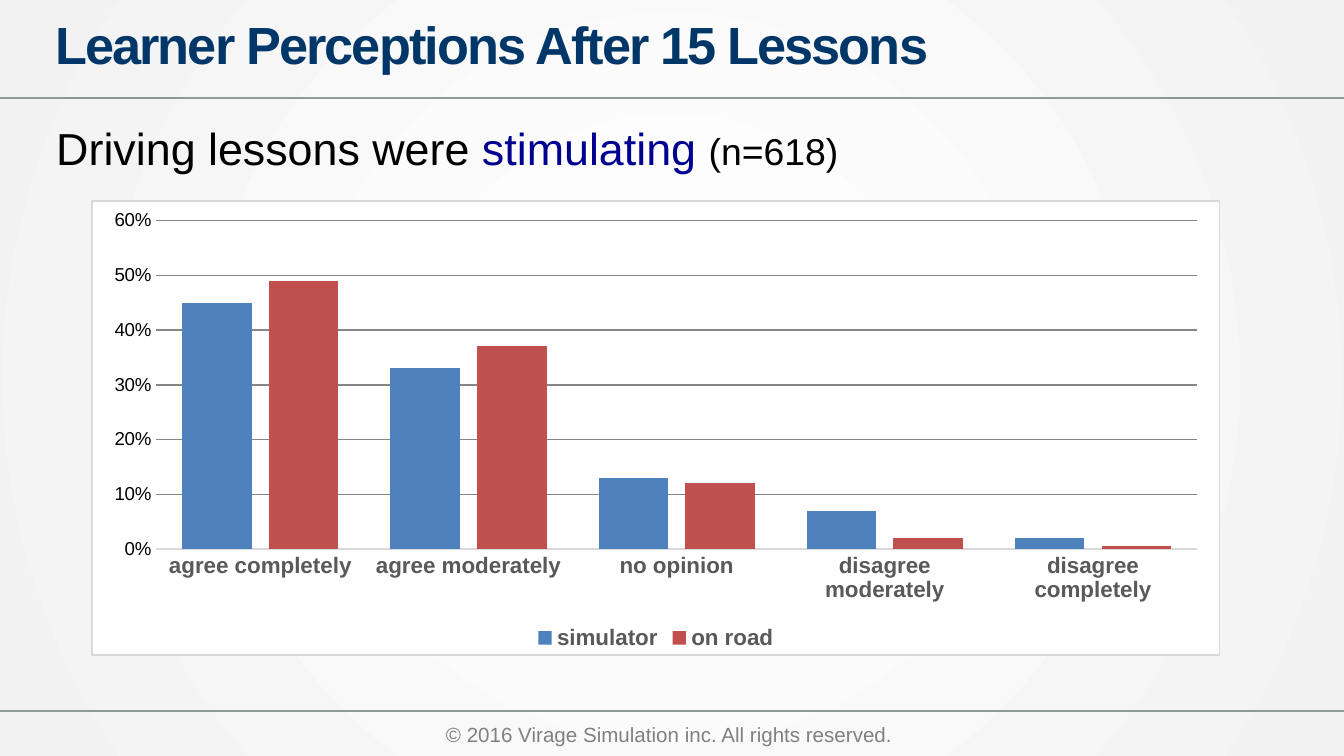
from lxml import etree
from pptx import Presentation, util as u
from pptx.chart.data import CategoryChartData
from pptx.dml.color import RGBColor
from pptx.enum import chart as ch, shapes, text
from pptx.oxml import parse_xml
from pptx.oxml.ns import nsdecls, qn

COLORS = {
    "title": "003768", "accent": "000090", "text": "000000", "footer": "808080",
    "rule": "8C9B93", "label": "595959", "border": "D9D9D9", "grid": "868686",
    "paper": "FFFFFF", "edge": "F2F2F2", "simulator": "4F81BD", "on road": "C0504D",
}


def color(name):
    return RGBColor.from_string(COLORS[name])


def style(font, size, name, bold=False):
    font.name = "Arial"
    font.size = u.Pt(size)
    font.bold = bold
    font.color.rgb = color(name)


deck = Presentation()
deck.slide_width = u.Inches(10)
deck.slide_height = u.Inches(10 * 9 / 16)
page = deck.slides.add_slide(deck.slide_layouts[5])

backdrop = page.background.fill
backdrop.gradient()
for stop, position, name in zip(backdrop.gradient_stops, (0.08, 1), ("paper", "edge")):
    stop.position = position
    stop.color.rgb = color(name)
gradient = page.background._cSld.find(".//" + qn("a:gradFill"))
gradient.replace(gradient.find(qn("a:lin")), parse_xml(
    f'<a:path {nsdecls("a")} path="circle">'
    '<a:fillToRect l="50000" t="50000" r="50000" b="50000"/></a:path>'))

for y in (0.73, 5.29):
    rule = page.shapes.add_connector(
        shapes.MSO_CONNECTOR.STRAIGHT, u.Inches(10), u.Inches(y), u.Inches(0), u.Inches(y))
    rule.line.color.rgb = color("rule")
    rule.line.width = u.Pt(0.75)
    etree.SubElement(rule._element.spPr, qn("a:effectLst"))

footer = page.shapes.add_textbox(u.Inches(3.22), u.Inches(5.32), u.Inches(3.56), u.Inches(0.29))
footer.text_frame.word_wrap = False
footer.text_frame.auto_size = text.MSO_AUTO_SIZE.SHAPE_TO_FIT_TEXT
para = footer.text_frame.paragraphs[0]
para.text = "© 2016 Virage Simulation inc. All rights reserved."
style(para.font, 11, "footer")

title = page.shapes.title
title.left, title.top = u.Inches(0.31), u.Inches(0.06)
title.width, title.height = u.Inches(7.47), u.Inches(0.53)
title.text_frame.text = "Learner Perceptions After 15 Lessons"
title.text_frame.auto_size = text.MSO_AUTO_SIZE.NONE
title.text_frame.vertical_anchor = text.MSO_ANCHOR.MIDDLE
para = title.text_frame.paragraphs[0]
para.alignment = text.PP_ALIGN.LEFT
style(para.font, 28, "title", True)
para.runs[0].font._element.set("spc", "-100")

statement = page.shapes.add_textbox(u.Inches(0.32), u.Inches(0.85), u.Inches(9.22), u.Inches(0.5))
statement.text_frame.word_wrap = True
statement.text_frame.auto_size = text.MSO_AUTO_SIZE.SHAPE_TO_FIT_TEXT
para = statement.text_frame.paragraphs[0]
for words, size, name in (
    ("Driving lessons were ", 24, "text"),
    ("stimulating ", 24, "accent"),
    ("(n=618)", 20, "text"),
):
    span = para.add_run()
    span.text = words
    style(span.font, size, name)

answers = CategoryChartData(number_format="0%")
answers.categories = ["agree completely", "agree moderately", "no opinion",
                      "disagree moderately", "disagree completely"]
answers.add_series("simulator", (0.45, 0.33, 0.13, 0.07, 0.02))
answers.add_series("on road", (0.49, 0.37, 0.12, 0.02, 0.005))
chart = page.shapes.add_chart(
    ch.XL_CHART_TYPE.COLUMN_CLUSTERED, u.Inches(0.68), u.Inches(1.49),
    u.Inches(8.4), u.Inches(3.39), answers).chart
chart.has_title = False
style(chart.font, 10, "text")

chart.has_legend = True
chart.legend.position = ch.XL_LEGEND_POSITION.BOTTOM
chart.legend.include_in_layout = False
style(chart.legend.font, 12, "label", True)

category_axis, value_axis = chart.category_axis, chart.value_axis
for axis in (category_axis, value_axis):
    axis.major_tick_mark = axis.minor_tick_mark = ch.XL_TICK_MARK.NONE
style(category_axis.tick_labels.font, 12, "label", True)
category_axis.format.line.color.rgb = color("border")
category_axis.format.line.width = u.Pt(0.75)
value_axis.minimum_scale, value_axis.maximum_scale, value_axis.major_unit = 0, 0.6, 0.1
value_axis.tick_labels.number_format = "0%"
value_axis.tick_labels.number_format_is_linked = False
value_axis.format.line.fill.background()
value_axis.major_gridlines.format.line.color.rgb = color("grid")
value_axis.major_gridlines.format.line.width = u.Pt(0.75)

plot = chart.plots[0]
plot.gap_width, plot.overlap, plot.vary_by_categories = 75, -25, False
for series in plot.series:
    series.format.fill.solid()
    series.format.fill.fore_color.rgb = color(series.name)

frame = parse_xml(
    f'<c:spPr {nsdecls("c", "a")}>'
    f'<a:solidFill><a:srgbClr val="{COLORS["paper"]}"/></a:solidFill>'
    f'<a:ln w="{u.Pt(0.75)}"><a:solidFill><a:srgbClr val="{COLORS["border"]}"/>'
    '</a:solidFill></a:ln></c:spPr>')
chart._chartSpace.find(qn("c:chart")).addnext(frame)

deck.save("out.pptx")
